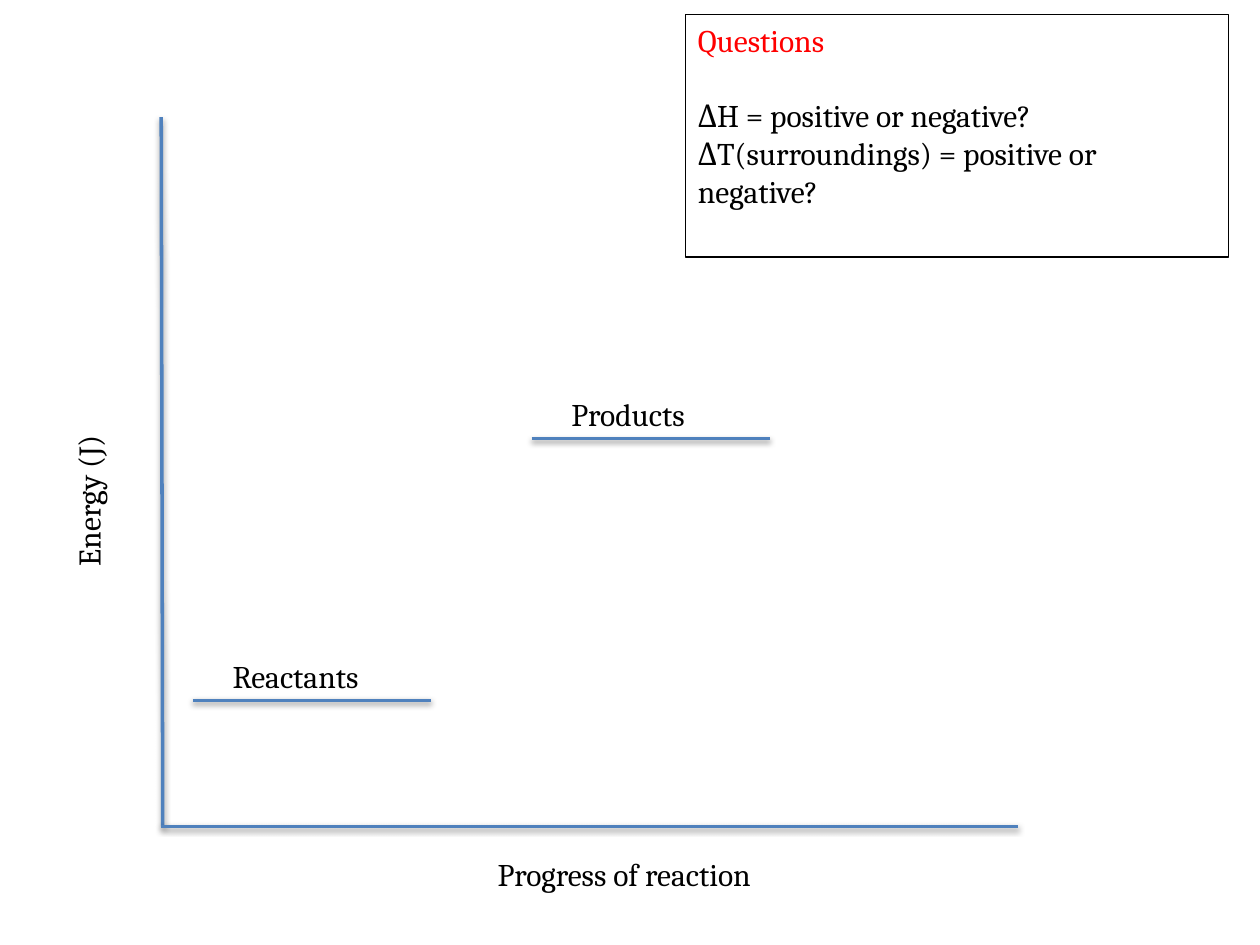
from dataclasses import dataclass

from pptx import Presentation
from pptx.dml.color import RGBColor
from pptx.enum.shapes import MSO_CONNECTOR
from pptx.util import Cm, Pt


@dataclass(frozen=True)
class Theme:
    """Colours, font and sizes of the slide."""
    ink: str = "000000"
    red: str = "FF0000"
    blue: str = "4F81BD"
    font: str = "Cambria"
    size: float = 18
    gap: float = 21.5
    rule: float = 2
    edge: float = 0.75
    row: float = 1.02


THEME = Theme()


def tint(code):
    """Turn a hex code into a colour."""
    return RGBColor.from_string(code)


def write(para, text, color=THEME.ink, size=THEME.size, after=0):
    """Put formatted text into a paragraph."""
    run = para.add_run()
    run.text = text
    run.font.name = THEME.font
    run.font.size = Pt(size)
    run.font.color.rgb = tint(color)
    para.space_after = Pt(after)


def frame(slide, x, y, w, h):
    """Add a wrapping text box, with lengths in centimetres."""
    box = slide.shapes.add_textbox(Cm(x), Cm(y), Cm(w), Cm(h))
    box.text_frame.word_wrap = True
    return box


def label(slide, text, x, y, w, turn=0):
    """Add a one-line label."""
    box = frame(slide, x, y, w, THEME.row)
    box.rotation = turn
    write(box.text_frame.paragraphs[0], text)


def rule(slide, x1, y1, x2, y2):
    """Draw a blue line that keeps the soft theme shadow."""
    line = slide.shapes.add_connector(
        MSO_CONNECTOR.STRAIGHT, Cm(x1), Cm(y1), Cm(x2), Cm(y2))
    line.line.color.rgb = tint(THEME.blue)
    line.line.width = Pt(THEME.rule)


def level(slide, text, x, y, w):
    """Draw an energy level with its name above."""
    rule(slide, x, y, x + w, y)
    label(slide, text, x + 0.55, y - 1, 5.36)


def graph(slide, x, y, w, h):
    """Draw the axes, their titles and the two energy levels."""
    base = y + h
    rule(slide, x, y, x + 0.03, base)
    rule(slide, x, base, x + w, base)
    label(slide, "Progress of reaction", x + 6.53, base + 0.46, 9.5)
    label(slide, "Energy (J)", x - 6.22, y + 4.04, 9.5, turn=270)
    level(slide, "Reactants", x + 0.64, y + 11.76, 4.8)
    level(slide, "Products", x + 7.47, y + 6.48, 4.8)


def panel(slide, x, y, w, h):
    """Draw the outlined box of questions."""
    box = frame(slide, x, y, w, h)
    box.line.color.rgb = tint(THEME.ink)
    box.line.width = Pt(THEME.edge)
    body = box.text_frame
    write(body.paragraphs[0], "Questions", color=THEME.red, after=THEME.gap)
    for text in ("ΔH = positive or negative?",
                 "ΔT(surroundings) = positive or negative?"):
        write(body.add_paragraph(), text)


def main():
    """Build and save the slide."""
    deck = Presentation()
    deck.slide_width, deck.slide_height = Cm(25.4), Cm(19.05)
    slide = deck.slides.add_slide(deck.slide_layouts[6])
    graph(slide, 3.25, 2.36, 17.27, 14.3)
    panel(slide, 13.82, 0.3, 10.95, 4.88)
    deck.save("out.pptx")


if __name__ == "__main__":
    main()
